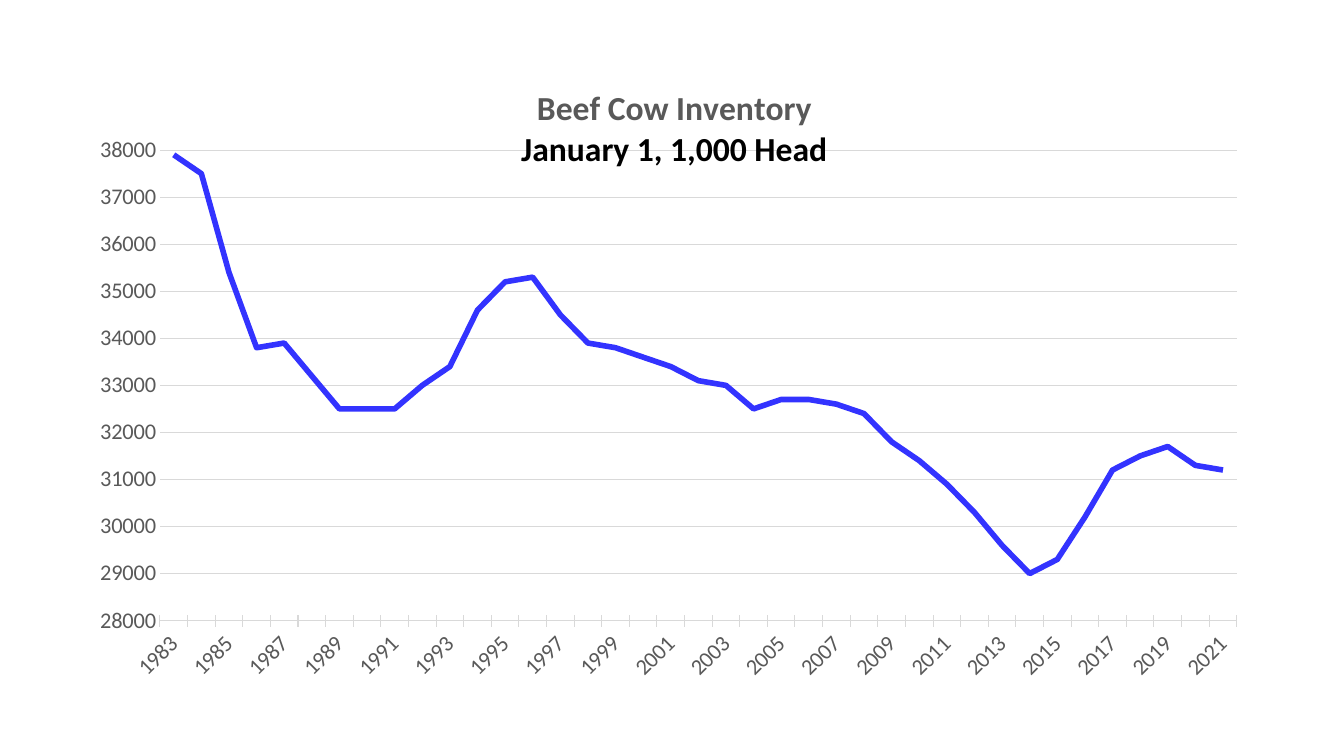
from dataclasses import dataclass

from pptx import Presentation
from pptx.chart.data import CategoryChartData
from pptx.dml.color import RGBColor
from pptx.enum.chart import XL_CHART_TYPE, XL_TICK_MARK
from pptx.enum.text import PP_ALIGN
from pptx.oxml import parse_xml
from pptx.oxml.ns import nsdecls, qn
from pptx.util import Pt


@dataclass(frozen=True)
class Theme:
    font: str = "Calibri"
    title_size: int = 24
    label_size: int = 16
    gray: str = "595959"
    black: str = "000000"
    grid: str = "D9D9D9"
    blue: str = "3333FF"
    thin: float = 0.75
    thick: float = 4


THEME = Theme()
FIRST_YEAR = 1983
INVENTORY = [
    37900, 37500, 35400, 33800, 33900, 33200, 32500, 32500, 32500, 33000,
    33400, 34600, 35200, 35300, 34500, 33900, 33800, 33600, 33400, 33100,
    33000, 32500, 32700, 32700, 32600, 32400, 31800, 31400, 30900, 30300,
    29600, 29000, 29300, 30200, 31200, 31500, 31700, 31300, 31200,
]


def style_font(font, size, color, bold=False):
    font.name = THEME.font
    font.size = Pt(size)
    font.bold = bold
    font.color.rgb = RGBColor.from_string(color)


def style_line(line, color, width):
    line.color.rgb = RGBColor.from_string(color)
    line.width = Pt(width)


def set_layout(element, index, **settings):
    for layout in element.findall(qn("c:layout")):
        element.remove(layout)
    entries = "".join(f'<c:{tag} val="{value}"/>' for tag, value in settings.items())
    element.insert(index, parse_xml(
        f'<c:layout {nsdecls("c")}><c:manualLayout>{entries}</c:manualLayout></c:layout>'))


def add_line_chart(slide):
    data = CategoryChartData(number_format="0")
    data.categories = [str(FIRST_YEAR + offset) for offset in range(len(INVENTORY))]
    data.add_series("Series 1", INVENTORY)
    frame = slide.shapes.add_chart(
        XL_CHART_TYPE.LINE, Pt(66.24), Pt(42.48), Pt(828), Pt(469.44), data)
    chart = frame.chart
    chart.has_legend = False
    style_font(chart.font, 10, THEME.black)
    series = chart.plots[0].series[0]
    series.smooth = False
    style_line(series.format.line, THEME.blue, THEME.thick)
    set_layout(chart.plots[0]._element.getparent(), 0, layoutTarget="inner",
               xMode="edge", yMode="edge", x=0.058, y=0.138, w=0.929, h=0.716)
    return chart


def add_title(chart, lines):
    chart.has_title = True
    text_frame = chart.chart_title.text_frame
    text_frame.text = "\n".join(text for text, color in lines)
    for paragraph, (text, color) in zip(text_frame.paragraphs, lines):
        paragraph.alignment = PP_ALIGN.CENTER
        style_font(paragraph.runs[0].font, THEME.title_size, color, True)
    title = chart.chart_title._element
    set_layout(title, 1, xMode="edge", yMode="edge", x=0.367, y=0.037)
    title.find(qn("c:overlay")).set("val", "1")


def style_value_axis(axis):
    axis.minimum_scale = 28000
    axis.maximum_scale = 38000
    axis.major_unit = 1000
    axis.major_tick_mark = XL_TICK_MARK.NONE
    axis.has_major_gridlines = True
    style_line(axis.major_gridlines.format.line, THEME.grid, THEME.thin)
    axis.format.line.fill.background()
    style_font(axis.tick_labels.font, THEME.label_size, THEME.gray)


def style_category_axis(axis):
    axis.major_tick_mark = XL_TICK_MARK.CROSS
    style_line(axis.format.line, THEME.grid, THEME.thin)
    style_font(axis.tick_labels.font, THEME.label_size, THEME.gray)
    element = axis._element
    element.find(qn("c:txPr")).find(qn("a:bodyPr")).set("rot", "-2700000")
    element.find(qn("c:noMultiLvlLbl")).addprevious(
        parse_xml(f'<c:tickLblSkip {nsdecls("c")} val="2"/>'))


def main():
    presentation = Presentation()
    presentation.slide_width = Pt(960)
    presentation.slide_height = Pt(540)
    slide = presentation.slides.add_slide(presentation.slide_layouts[6])
    chart = add_line_chart(slide)
    add_title(chart, [("Beef Cow Inventory", THEME.gray),
                      ("January 1, 1,000 Head", THEME.black)])
    style_value_axis(chart.value_axis)
    style_category_axis(chart.category_axis)
    presentation.save("out.pptx")


if __name__ == "__main__":
    main()
